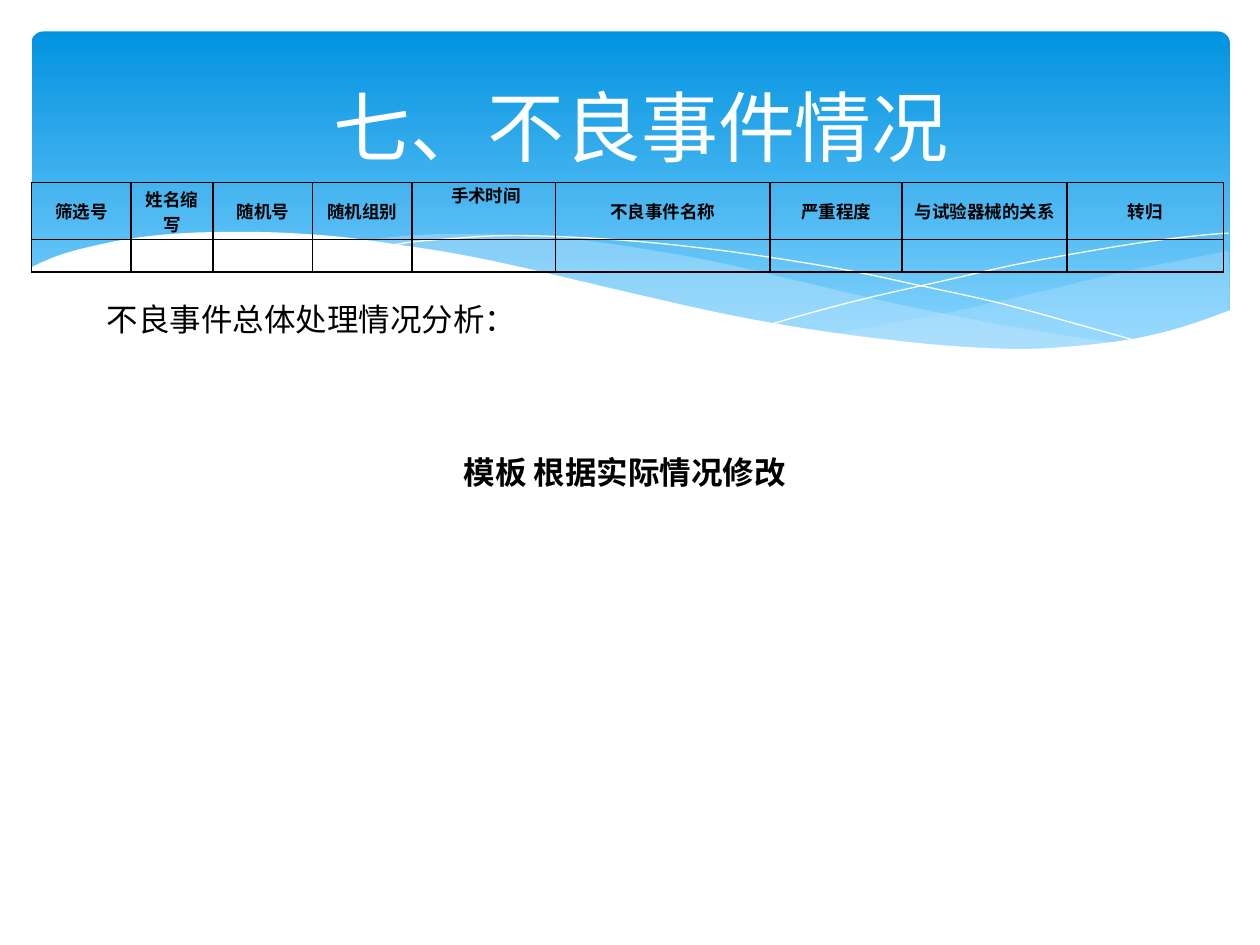
from lxml import etree
from pptx import Presentation
from pptx.dml.color import RGBColor
from pptx.enum.shapes import MSO_SHAPE
from pptx.enum.text import MSO_ANCHOR, PP_ALIGN
from pptx.oxml.ns import qn
from pptx.util import Pt

ROUND_RECT = MSO_SHAPE.ROUNDED_RECTANGLE
CENTER, LEFT = PP_ALIGN.CENTER, PP_ALIGN.LEFT
TOP, MIDDLE = MSO_ANCHOR.TOP, MSO_ANCHOR.MIDDLE

COLORS = {"sky_top": "0293E0", "sky_bottom": "83D3FE", "wave": "C6E7FC",
          "white": "FFFFFF", "text": "000000", "border": "080000"}
CJK, LATIN = "Noto Sans CJK SC", "Cabin"

# Texts: content, box, size, font, colour, bold, alignment, anchor, wrap
TEXTS = [
    ("七、不良事件情况", (42.5, 22.3, 648, 98.6), 44, LATIN, "white", False, CENTER, MIDDLE, True),
    ("模板 根据实际情况修改", (257.8, 255.6, 204.5, 28.8), 18, CJK, "text", True, LEFT, TOP, False),
    ("不良事件总体处理情况分析：", (54, 167.8, 365, 28.8), 18, LATIN, "text", False, LEFT, TOP, True),
]

# Table: header and column width
COLUMNS = [("筛选号", 56.9), ("姓名缩写", 46.8), ("随机号", 56.9), ("随机组别", 56.9),
           (" 手术时间", 82.1), ("不良事件名称", 122.4), ("严重程度", 75.6),
           ("与试验器械的关系", 94.3), ("转归", 89.3)]
TOP_ALIGNED = 4
ROW_HEIGHTS = [32.4, 18.7]

# Waves: knots of each edge, smoothed between its ends
FAN = [
    [(702, 143.3), (673.2, 149), (641.5, 155.5), (599, 165.6), (542.2, 178.6), (475.9, 190.8)],
    [(475.9, 190.8), (507.6, 195.1), (545, 198.7), (578.2, 200.2), (614.9, 198.7),
     (645.8, 194.4), (673.2, 187.9), (702.7, 177.8)],
]
RIBBON = [
    [(205.9, 137.5), (246.2, 143.3), (290.9, 151.9), (353.5, 167), (407.5, 178.6),
     (456.5, 187.9), (500.4, 194.4), (538.6, 198.7), (581, 200.2), (617, 199.4), (643, 196.6)],
    [(643, 196.6), (602.6, 190.8), (558, 182.9), (508.3, 172.8), (452.9, 159.8),
     (409.7, 149.8), (370.1, 142.6), (334.8, 137.5), (302.4, 134.6), (273.6, 133.9),
     (247.7, 133.9), (225.4, 135.4), (205.9, 137.5)],
]
FALLING_LINE = [
    [(222.5, 140.4), (236.2, 138.2), (261.4, 136.1), (288.7, 134.6), (324, 135.4),
     (367.2, 138.2), (419, 144), (478.8, 153.4), (523.4, 162.7), (572.4, 173.5),
     (625, 187.9), (653, 195.8)],
]
RISING_LINE = [
    [(441.4, 185), (469.4, 177.1), (500.4, 169.2), (538.6, 160.6), (580.3, 151.2),
     (623.5, 143.3), (655.2, 138.2), (684.7, 134.6), (702, 133.2)],
]
WHITE_WAVE = [
    [(703.4, 177.1), (676.8, 186.5), (647.3, 193.7), (612, 198), (582.5, 199.4),
     (547.9, 198), (509.8, 194.4), (465.8, 188.6), (416.9, 180), (362.2, 167.8),
     (301, 153.4), (262.8, 145.4), (226.8, 139.7), (195.1, 135.4), (165.6, 133.2),
     (139, 132.5), (105.1, 133.2), (76.3, 136.1), (54, 140.4), (37.4, 144.7),
     (25.9, 149), (16.6, 153.4)],
    [(16.6, 236.9), (703.4, 236.9)],
]
# Edges, fill colour (None for a white line), opacity in percent
WAVES = [(FAN, "wave", 29), (RIBBON, "wave", 40), (FALLING_LINE, None, 100),
         (RISING_LINE, None, 100), (WHITE_WAVE, "white", 100)]


def rgb(name):
    return RGBColor.from_string(COLORS[name])


def smooth(knots, steps=4):
    """Catmull-Rom curve through the knots."""
    ends = [knots[0], *knots, knots[-1]]
    points = [knots[0]]
    for a, b, c, d in zip(ends, ends[1:], ends[2:], ends[3:]):
        for i in range(1, steps + 1):
            t = i / steps
            points.append(tuple(
                (2 * q + (r - p) * t + (2 * p - 5 * q + 4 * r - s) * t ** 2
                 + (3 * q - p - 3 * r + s) * t ** 3) / 2
                for p, q, r, s in zip(a, b, c, d)))
    return points


def add_wave(shapes, edges, fill, opacity):
    points = [(x * 100, y * 100) for edge in edges for x, y in smooth(edge)]
    builder = shapes.build_freeform(*points[0], scale=Pt(1) / 100)
    builder.add_line_segments(points[1:], close=fill is not None)
    sp = builder.convert_to_shape()
    sp.shadow.inherit = False
    if fill is None:
        sp.fill.background()
        sp.line.color.rgb = rgb("white")
        sp.line.width = Pt(0)
        return
    sp.line.fill.background()
    sp.fill.solid()
    sp.fill.fore_color.rgb = rgb(fill)
    if opacity < 100:
        color = sp.fill._xPr.find(".//" + qn("a:srgbClr"))
        etree.SubElement(color, qn("a:alpha"), val=str(opacity * 1000))


def write(tf, text, size, font, color, bold, align):
    p = tf.paragraphs[0]
    p.text = text
    p.alignment = align
    for r in p.runs:
        r.font.size, r.font.name, r.font.bold = Pt(size), font, bold
        r.font.color.rgb = rgb(color)
        etree.SubElement(r.font._element, qn("a:ea"), typeface=CJK)
    if not text:
        etree.SubElement(p._p, qn("a:endParaRPr"), sz=str(size * 100))


def add_borders(cell):
    tc_pr = cell._tc.get_or_add_tcPr()
    for i, side in enumerate(("lnL", "lnR", "lnT", "lnB")):
        ln = etree.Element(qn("a:" + side), w=str(Pt(1)))
        fill = etree.SubElement(ln, qn("a:solidFill"))
        etree.SubElement(fill, qn("a:srgbClr"), val=COLORS["border"])
        tc_pr.insert(i, ln)


prs = Presentation()
prs.slide_width, prs.slide_height = Pt(720), Pt(540)
shapes = prs.slides.add_slide(prs.slide_layouts[6]).shapes

# Sky panel
sky = shapes.add_shape(ROUND_RECT, Pt(18), Pt(18), Pt(684.7), Pt(194.4))
sky.adjustments[0] = 0.034
sky.shadow.inherit = False
sky.line.fill.background()
sky.fill.gradient()
sky.fill.gradient_angle = 270
for stop, name, position in zip(sky.fill.gradient_stops, ("sky_top", "sky_bottom"), (0, 0.9)):
    stop.color.rgb = rgb(name)
    stop.position = position

# Waves
for wave in WAVES:
    add_wave(shapes, *wave)

# Adverse event table
table = shapes.add_table(len(ROW_HEIGHTS), len(COLUMNS), Pt(18), Pt(104.4),
                         Pt(sum(w for _, w in COLUMNS)), Pt(sum(ROW_HEIGHTS))).table
table.horz_banding = False
for row, height in zip(table.rows, ROW_HEIGHTS):
    row.height = Pt(height)
for c, (header, width) in enumerate(COLUMNS):
    table.columns[c].width = Pt(width)
    for r, text in enumerate((header, "")):
        cell = table.cell(r, c)
        cell.margin_left = cell.margin_right = Pt(5)
        cell.margin_top = cell.margin_bottom = 0
        cell.vertical_anchor = TOP if c == TOP_ALIGNED else MIDDLE
        cell.fill.background()
        add_borders(cell)
        write(cell.text_frame, text, 10, CJK, "text", True, CENTER)

# Title and notes
for text, box, size, font, color, bold, align, anchor, wrap in TEXTS:
    tf = shapes.add_textbox(*map(Pt, box)).text_frame
    tf.word_wrap = wrap
    tf.vertical_anchor = anchor
    write(tf, text, size, font, color, bold, align)

prs.save("out.pptx")
